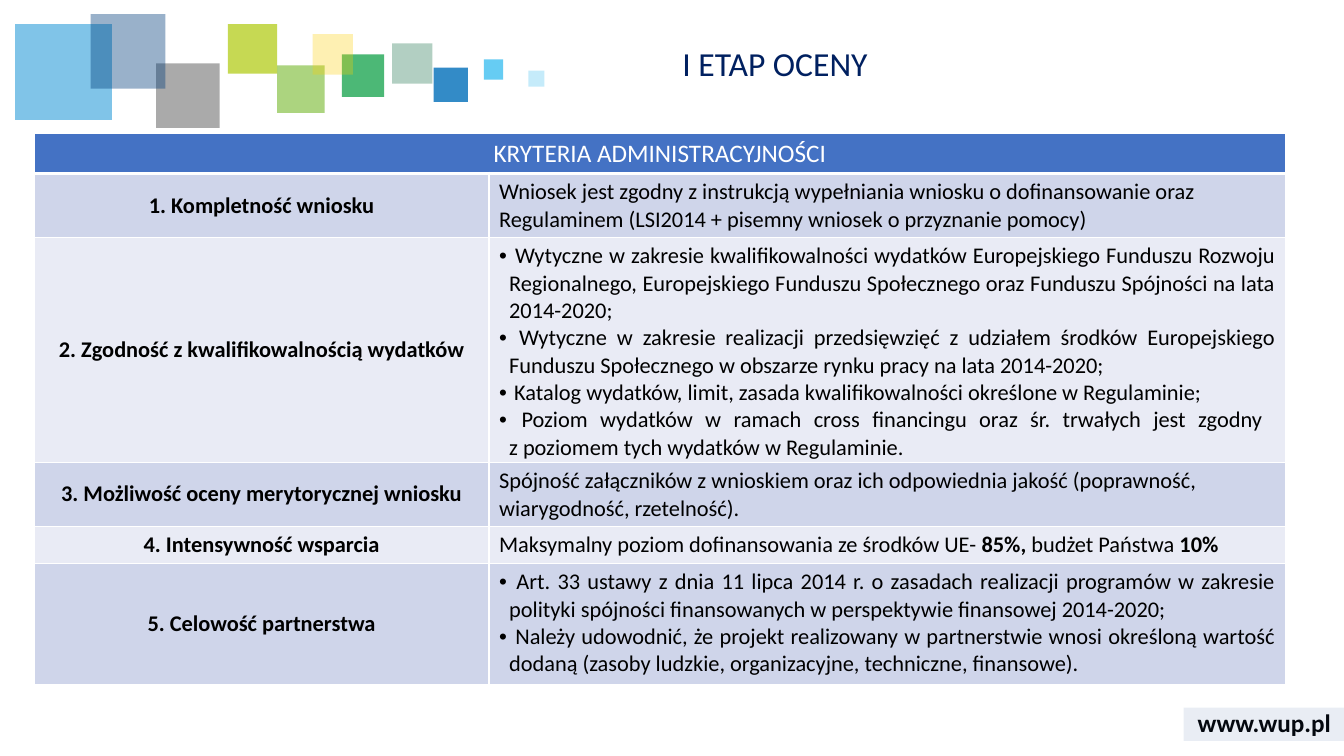
import dataclasses

import pptx
import pptx.dml.color
import pptx.enum.shapes
import pptx.enum.text
import pptx.oxml
import pptx.oxml.ns
import pptx.util

ALIGN = pptx.enum.text.PP_ALIGN
ANCHOR = pptx.enum.text.MSO_ANCHOR


@dataclasses.dataclass(frozen=True)
class Theme:
    font: str = "Calibri"
    white: str = "FFFFFF"
    black: str = "000000"
    navy: str = "002060"
    footer: str = "2F5597"
    header: str = "4472C4"
    bands: tuple = ("CFD5EA", "E9EBF5")
    title_size: int = 24
    header_size: int = 18
    body_size: int = 16


def px(value):
    return pptx.util.Emu(value * 9144)


def rgb(code):
    return pptx.dml.color.RGBColor.from_string(code)


def element(parent, tag, **attributes):
    child = pptx.oxml.ns.qn(tag)
    child = parent.makeelement(child, {key: str(value) for key, value in attributes.items()})
    parent.append(child)
    return child


class SlideBuilder:
    def __init__(self, page, theme):
        self.page = page
        self.theme = theme

    def style(self, para, size, color, bold=False):
        for span in para.runs:
            span.font.name = self.theme.font
            span.font.size = pptx.util.Pt(size)
            span.font.bold = bold
            span.font.color.rgb = rgb(color)
        for line_break in para._p.findall(pptx.oxml.ns.qn("a:br")):
            element(line_break, "a:rPr", sz=size * 100)

    def text(self, place, words, size, color, bold=False, align=ALIGN.LEFT,
             anchor=ANCHOR.TOP, spacing=None):
        box = self.page.shapes.add_textbox(*map(px, place))
        frame = box.text_frame
        frame.word_wrap = True
        frame.vertical_anchor = anchor
        frame.text = words
        para = frame.paragraphs[0]
        para.alignment = align
        para.line_spacing = spacing
        self.style(para, size, color, bold)

    def square(self, place, color, opacity):
        kind = pptx.enum.shapes.MSO_SHAPE.RECTANGLE
        shape = self.page.shapes.add_shape(kind, *map(px, place))
        shape.shadow.inherit = False
        shape.line.fill.background()
        shape.fill.solid()
        shape.fill.fore_color.rgb = rgb(color)
        fill = shape._element.spPr.find(pptx.oxml.ns.qn("a:solidFill"))
        element(fill[0], "a:alpha", val=opacity * 1000)

    def table(self, place, columns, rows):
        frame = self.page.shapes.add_table(len(rows), len(columns), *map(px, place))
        for column, width in zip(frame.table.columns, columns):
            column.width = px(width)
        for row, height in zip(frame.table.rows, rows):
            row.height = px(height)
        return frame.table

    def cell(self, cell, fill, bottom=1):
        cell.margin_left = cell.margin_right = px(10)
        cell.margin_top = cell.margin_bottom = px(5)
        properties = cell._tc.get_or_add_tcPr()
        for side, width in (("L", 1), ("R", 1), ("T", 1), ("B", bottom)):
            line = element(properties, f"a:ln{side}", w=width * 12700)
            element(element(line, "a:solidFill"), "a:srgbClr", val=self.theme.white)
        cell.fill.solid()
        cell.fill.fore_color.rgb = rgb(fill)

    def label(self, cell, words, size, color, bold):
        cell.vertical_anchor = ANCHOR.MIDDLE
        cell.text = words
        para = cell.text_frame.paragraphs[0]
        para.alignment = ALIGN.CENTER
        self.style(para, size, color, bold)

    def bullets(self, cell, items):
        cell.text = items[0]
        for item in items[1:]:
            cell.text_frame.add_paragraph().text = item
        for para in cell.text_frame.paragraphs:
            properties = para._p.get_or_add_pPr()
            properties.set("marL", str(px(10)))
            properties.set("indent", str(px(-10)))
            element(properties, "a:buFont", typeface="Arial")
            element(properties, "a:buChar", char="•")
            para.alignment = ALIGN.JUSTIFY
            self.style(para, self.theme.body_size, self.theme.black)

    def prose(self, cell, spans):
        para = cell.text_frame.paragraphs[0]
        for words in spans:
            para.add_run().text = words
        self.style(para, self.theme.body_size, self.theme.black)
        for span in para.runs[1::2]:
            span.font.bold = True


# Left, top, width, height, colour, opacity in percent
SQUARES = [
    (389, 43, 40, 40, "006138", 30),
    (430, 67, 34, 34, "006EB9", 80),
    (339, 54, 42, 42, "009A3C", 70),
    (15, 24, 96, 95, "028BD3", 50),
    (275, 65, 47, 47, "75B82A", 60),
    (155, 63, 63, 64, "575757", 50),
    (90, 14, 74, 74, "003D7C", 40),
    (480, 59, 19, 20, "40C0F1", 80),
    (226, 24, 49, 49, "AFCA0B", 70),
    (310, 34, 40, 40, "FED000", 30),
    (524, 70, 16, 16, "40C0F1", 30),
]

# Row height, criterion, bulleted or not, description.
# Plain descriptions alternate regular and bold spans.
CRITERIA = [
    (63, "1. Kompletność wniosku", False, [
        "Wniosek jest zgodny z instrukcją wypełniania wniosku o dofinansowanie "
        "oraz Regulaminem (LSI2014 + pisemny wniosek o przyznanie pomocy)"]),
    (223, "2. Zgodność z kwalifikowalnością wydatków", True, [
        " Wytyczne w zakresie kwalifikowalności wydatków Europejskiego Funduszu Rozwoju "
        "Regionalnego, Europejskiego Funduszu Społecznego oraz Funduszu Spójności "
        "na lata 2014-2020;",
        " Wytyczne w zakresie realizacji przedsięwzięć z udziałem środków Europejskiego "
        "Funduszu Społecznego w obszarze rynku pracy na lata 2014-2020;",
        " Katalog wydatków, limit, zasada kwalifikowalności określone w Regulaminie;",
        " Poziom wydatków w ramach cross financingu oraz śr. trwałych jest zgodny \n"
        "z poziomem tych wydatków w Regulaminie."]),
    (63, "3. Możliwość oceny merytorycznej wniosku", False, [
        "Spójność załączników z wnioskiem oraz ich odpowiednia jakość (poprawność, "
        "wiarygodność, rzetelność)."]),
    (37, "4. Intensywność wsparcia", False, [
        "Maksymalny poziom dofinansowania ze środków UE- ", "85%, ",
        "budżet Państwa ", "10%"]),
    (120, "5. Celowość partnerstwa", True, [
        " Art. 33 ustawy z dnia 11 lipca 2014 r. o zasadach realizacji programów w zakresie "
        "polityki spójności finansowanych w perspektywie finansowej 2014-2020;",
        " Należy udowodnić, że projekt realizowany w partnerstwie wnosi określoną wartość "
        "dodaną (zasoby ludzkie, organizacyjne, techniczne, finansowe)."]),
]


def main():
    theme = Theme()
    deck = pptx.Presentation()
    deck.slide_width, deck.slide_height = px(1333), px(750)
    page = deck.slides.add_slide(deck.slide_layouts[6])
    builder = SlideBuilder(page, theme)

    # Footer address and decorative squares
    builder.text((1174, 697, 160, 40), "www.wup.pl", theme.header_size, theme.black,
                 bold=True, align=ALIGN.CENTER, anchor=ANCHOR.MIDDLE)
    for *place, color, opacity in SQUARES:
        builder.square(place, color, opacity)
    builder.square((1174, 702, 160, 33), theme.footer, 10)

    # Criteria table
    heights = [40] + [criterion[0] for criterion in CRITERIA]
    table = builder.table((34, 132, 1241, sum(heights)), (451, 790), heights)
    for cell in table.rows[0].cells:
        builder.cell(cell, theme.header, bottom=3)
    heading = table.cell(0, 0)
    heading.merge(table.cell(0, 1))
    builder.label(heading, "KRYTERIA ADMINISTRACYJNOŚCI", theme.header_size, theme.white, False)
    for index, (_, name, bulleted, description) in enumerate(CRITERIA):
        criterion, details = table.rows[index + 1].cells
        for cell in (criterion, details):
            builder.cell(cell, theme.bands[index % 2])
        builder.label(criterion, name, theme.body_size, theme.black, True)
        write = builder.bullets if bulleted else builder.prose
        write(details, description)

    # Title
    builder.text((667, 42, 636, 55), "I ETAP OCENY", theme.title_size, theme.navy, spacing=0.9)

    deck.save("out.pptx")


if __name__ == "__main__":
    main()
